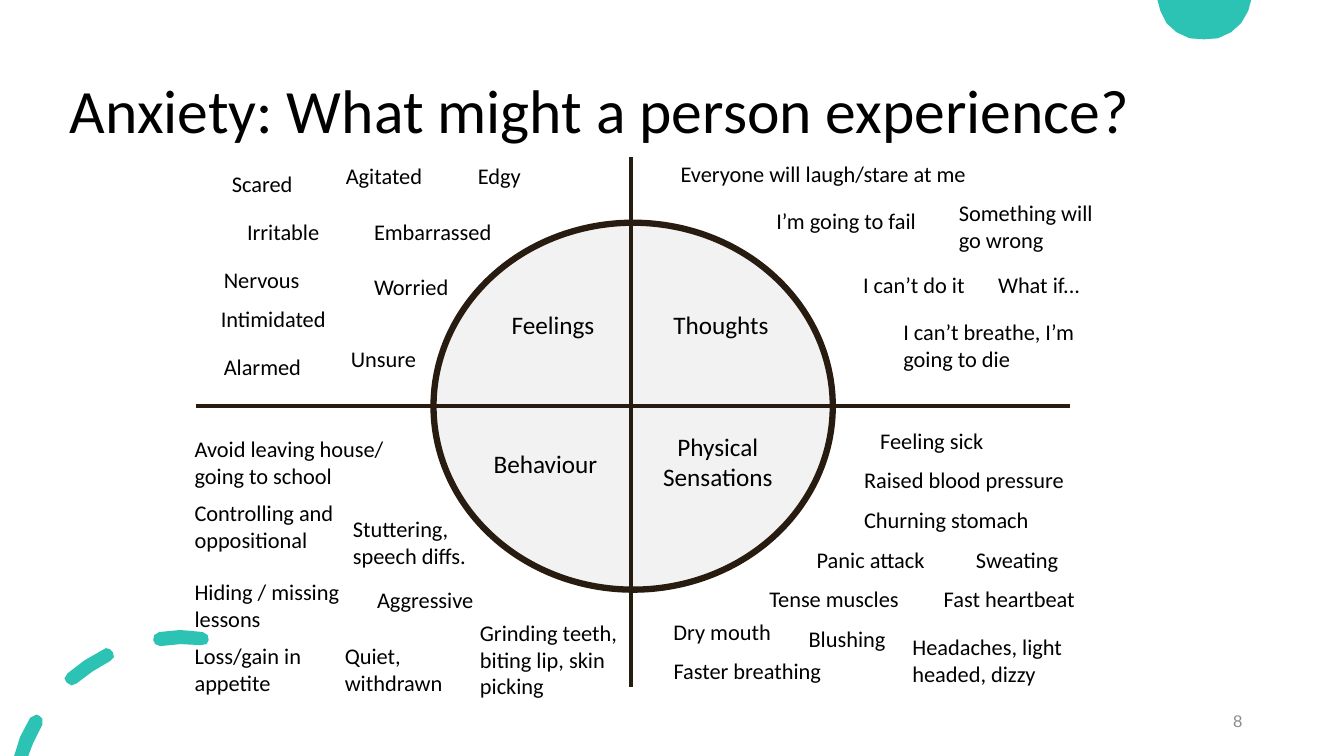
import pptx
import pptx.dml.color
import pptx.enum.shapes
import pptx.enum.text
import pptx.oxml
import pptx.util
from pptx.util import Inches

TEAL, BROWN, PALE, BLACK, GREY = "2CC3B4", "281B10", "F2F2F2", "000000", "8C8C8C"
ALIGN = pptx.enum.text.PP_ALIGN
ANCHOR = pptx.enum.text.MSO_ANCHOR

TITLE = "Anxiety: What might a person experience?"

TOP_DISC = [
    [(11.48, 0), (12.41, 0), (12.38, 0.11), (12.31, 0.23), (12.21, 0.32), (12.08, 0.38),
     (11.94, 0.39), (11.8, 0.38), (11.67, 0.32), (11.57, 0.23), (11.51, 0.11)],
]
DASHED_ARC = [
    [(0.36, 7.09), (0.3, 7.12), (0.2, 7.31), (0.14, 7.5), (0.28, 7.5), (0.33, 7.37),
     (0.42, 7.19), (0.42, 7.13), (0.39, 7.1)],
    [(1.05, 6.43), (0.84, 6.55), (0.67, 6.68), (0.64, 6.73), (0.66, 6.77), (0.71, 6.8),
     (0.76, 6.78), (0.92, 6.66), (1.09, 6.56), (1.13, 6.52), (1.12, 6.47), (1.09, 6.44)],
    [(1.79, 6.25), (1.58, 6.27), (1.53, 6.3), (1.52, 6.35), (1.54, 6.39), (1.59, 6.41),
     (1.79, 6.39), (1.99, 6.4), (2.05, 6.39), (2.07, 6.35), (2.06, 6.3), (2.01, 6.27)],
]

CIRCLE = (4.3, 2.21, 3.96, 3.64)
AXES = [(6.26, 1.56, 6.26, 6.82), (1.94, 4.03, 10.61, 4.03)]

# Text, left, top, width, height
QUADRANT_LABELS = [
    ("Feelings", 4.76, 3.02, 1.45, 0.42),
    ("Thoughts", 6.35, 3.02, 1.6, 0.42),
    ("Behaviour", 4.53, 4.4, 1.76, 0.42),
    ("Physical Sensations", 6.2, 4.23, 1.84, 0.73),
]
# Text, left, top, width, and a height where it is not one line
BEHAVIOURS = [
    ("Avoid leaving house/\ngoing to school", 1.82, 4.27, 2.28, 0.63),
    ("Stuttering, speech diffs.", 3.39, 5.06, 1.65, 0.63),
    ("Grinding teeth, biting lip, skin picking", 4.65, 6.09, 1.88, 0.94),
    ("Loss/gain in appetite", 1.82, 6.32, 1.65, 0.63),
    ("Quiet, withdrawn", 3.31, 6.32, 1.65, 0.63),
    ("Aggressive", 3.63, 5.77, 1.65),
    ("Controlling and oppositional", 1.82, 4.9, 1.8, 0.62),
    ("Hiding / missing lessons", 1.82, 5.69, 2.13, 0.63),
]
THOUGHTS = [
    ("I can’t do it", 8.45, 2.64, 1.34),
    ("Everyone will laugh/stare at me", 6.64, 1.54, 3.31),
    ("I’m going to fail", 7.59, 2.01, 1.73),
    ("I can’t breathe, I’m going to die", 8.85, 3.11, 2.13, 0.63),
    ("Something will go wrong", 9.4, 1.93, 1.73, 0.63),
    ("What if...", 9.79, 2.64, 1.18),
]
FEELINGS = [
    ("Scared", 2.19, 1.64, 1.02),
    ("Irritable", 2.34, 2.11, 1.02),
    ("Agitated", 3.32, 1.56, 1.15),
    ("Nervous", 2.11, 2.59, 1.1),
    ("Edgy", 4.63, 1.56, 0.86),
    ("Worried", 3.6, 2.66, 1.02),
    ("Alarmed", 2.11, 3.45, 1.1),
    ("Unsure", 3.37, 3.37, 1.02),
    ("Intimidated", 2.08, 2.98, 1.52),
    ("Embarrassed", 3.6, 2.11, 1.57),
]
SENSATIONS = [
    ("Feeling sick", 8.62, 4.19, 1.5),
    ("Tense muscles", 7.52, 5.76, 1.72),
    ("Headaches, light headed, dizzy", 8.94, 6.23, 1.96, 0.62),
    ("Fast heartbeat", 9.25, 5.76, 1.72),
    ("Faster breathing", 6.57, 6.47, 1.88),
    ("Sweating", 9.57, 5.37, 1.17),
    ("Blushing", 7.91, 6.15, 1.09),
    ("Raised blood pressure", 8.46, 4.58, 2.44),
    ("Churning stomach", 8.46, 4.97, 2.13),
    ("Panic attack", 7.99, 5.37, 1.72),
    ("Dry mouth", 6.57, 6.08, 1.26),
]


def rgb(color):
    return pptx.dml.color.RGBColor.from_string(color)


def write(shape, text, size=16, font="Calibri", color=BLACK, align=ALIGN.LEFT,
          anchor=ANCHOR.TOP, line_spacing=None, margin_left=0.1):
    frame = shape.text_frame
    frame.text = text
    frame.word_wrap = True
    frame.vertical_anchor = anchor
    frame.margin_left = Inches(margin_left)
    for paragraph in frame.paragraphs:
        paragraph.alignment = align
        paragraph.line_spacing = line_spacing
        for run in paragraph.runs:
            run.font.size = pptx.util.Pt(size)
            run.font.name = font
            run.font.color.rgb = rgb(color)


def add_text(shapes, text, left, top, width, height=0.39, **text_format):
    box = shapes.add_textbox(Inches(left), Inches(top), Inches(width), Inches(height))
    write(box, text, **text_format)
    return box


def set_fill(shape, color):
    shape.shadow.inherit = False
    shape.fill.solid()
    shape.fill.fore_color.rgb = rgb(color)


def set_line(shape, width):
    shape.line.color.rgb = rgb(BROWN)
    shape.line.width = pptx.util.Pt(width)


def add_outlines(shapes, outlines):
    """Draw all the outlines as one teal shape."""
    contours = [[(Inches(x), Inches(y)) for x, y in outline] for outline in outlines]
    builder = shapes.build_freeform(*contours[0][0])
    for index, points in enumerate(contours):
        if index:
            builder.move_to(*points[0])
        builder.add_line_segments(points[1:], close=True)
    shape = builder.convert_to_shape()
    set_fill(shape, TEAL)
    shape.line.fill.background()


def add_wheel(shapes):
    circle = shapes.add_shape(pptx.enum.shapes.MSO_SHAPE.OVAL, *map(Inches, CIRCLE))
    set_fill(circle, PALE)
    set_line(circle, 4.5)
    for ends in AXES:
        axis = shapes.add_connector(pptx.enum.shapes.MSO_CONNECTOR.STRAIGHT, *map(Inches, ends))
        set_line(axis, 3)
        axis.element.spPr.append(pptx.oxml.parse_xml(
            '<a:effectLst xmlns:a="http://schemas.openxmlformats.org/drawingml/2006/main"/>'))
    for label in QUADRANT_LABELS:
        box = add_text(shapes, *label, size=18, align=ALIGN.CENTER)
        box.text_frame.auto_size = pptx.enum.text.MSO_AUTO_SIZE.SHAPE_TO_FIT_TEXT


def main():
    presentation = pptx.Presentation()
    presentation.slide_width, presentation.slide_height = Inches(13.33), Inches(7.5)
    slide = presentation.slides.add_slide(presentation.slide_layouts[5])
    shapes = slide.shapes

    add_outlines(shapes, TOP_DISC)
    add_outlines(shapes, DASHED_ARC)

    title = shapes.title
    title.left, title.top, title.width, title.height = map(Inches, (0.59, 0.4, 11.5, 1.45))
    write(title, TITLE, size=44, anchor=ANCHOR.MIDDLE, line_spacing=0.9)
    add_text(shapes, "8", 9.42, 6.95, 3, 0.4, size=12, font="Arial", color=GREY,
             align=ALIGN.RIGHT, anchor=ANCHOR.MIDDLE)

    add_wheel(shapes)
    for example in BEHAVIOURS + THOUGHTS + FEELINGS + SENSATIONS:
        add_text(shapes, *example, margin_left=0.11)

    presentation.save("out.pptx")


if __name__ == "__main__":
    main()
